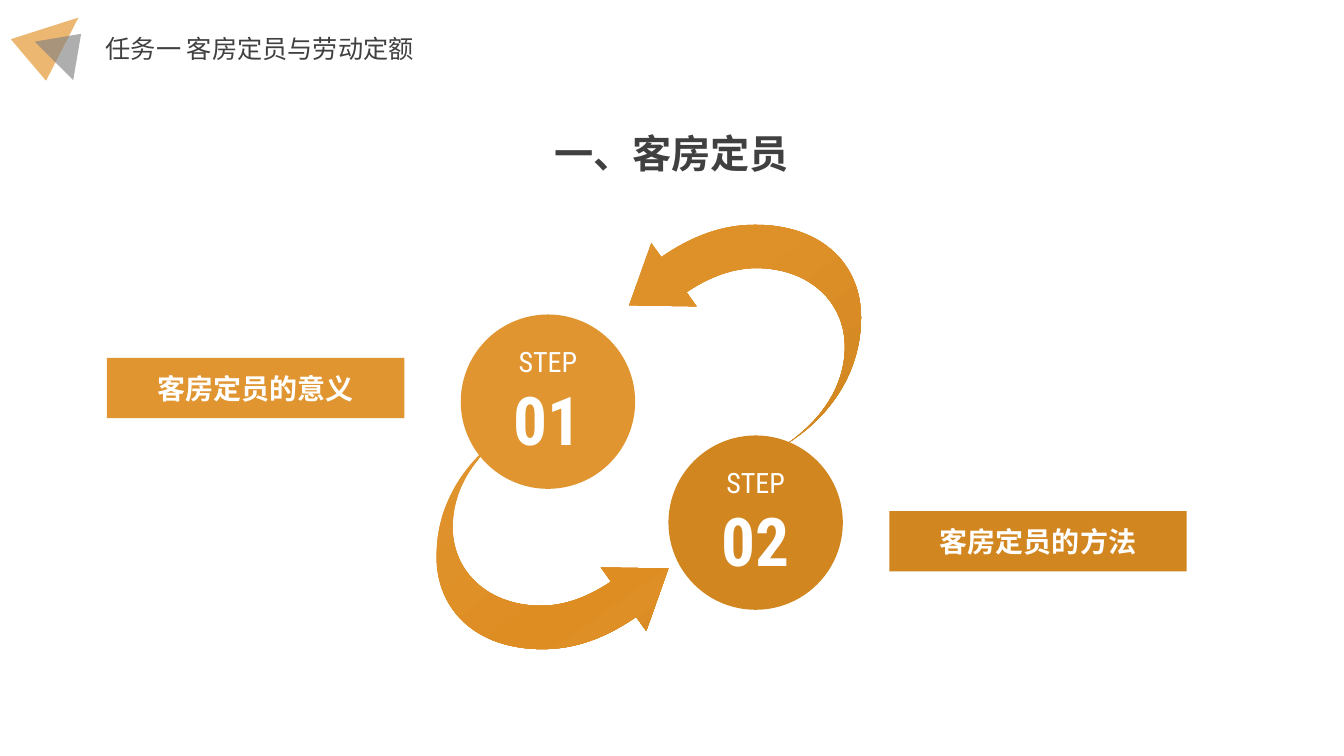
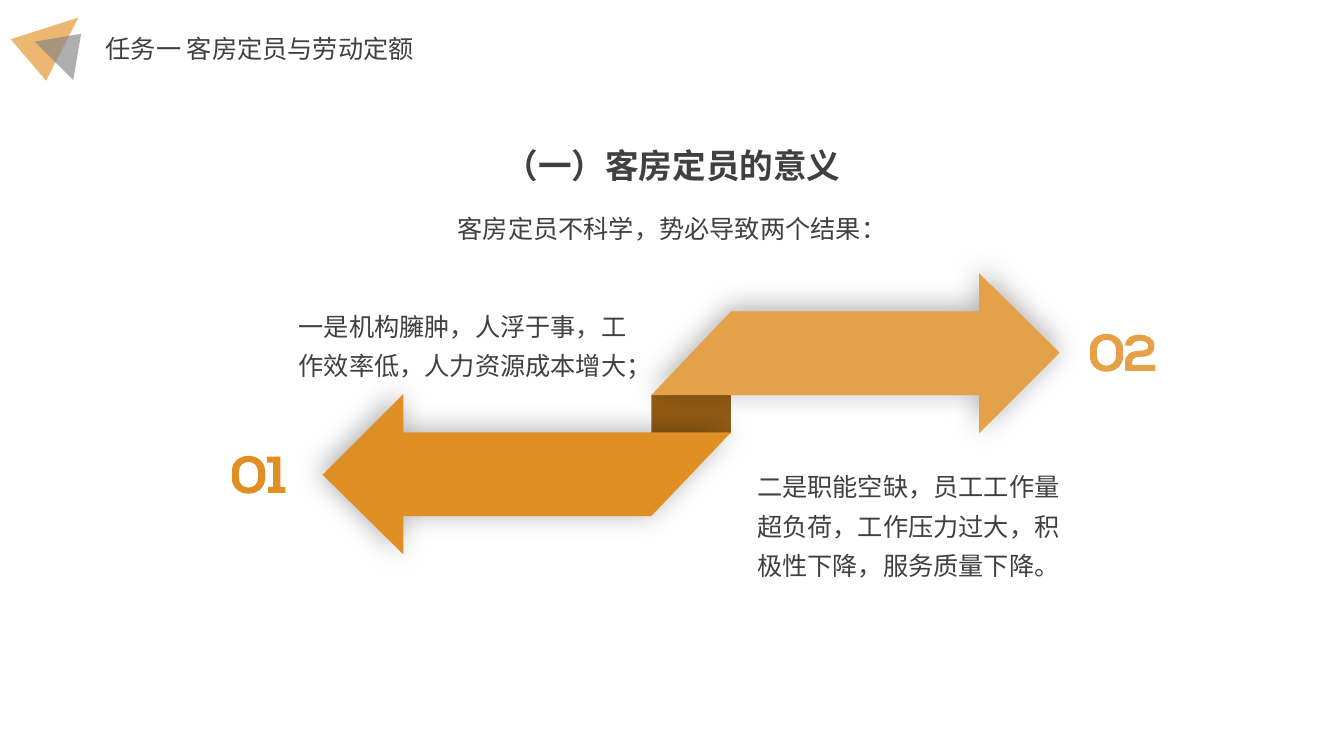
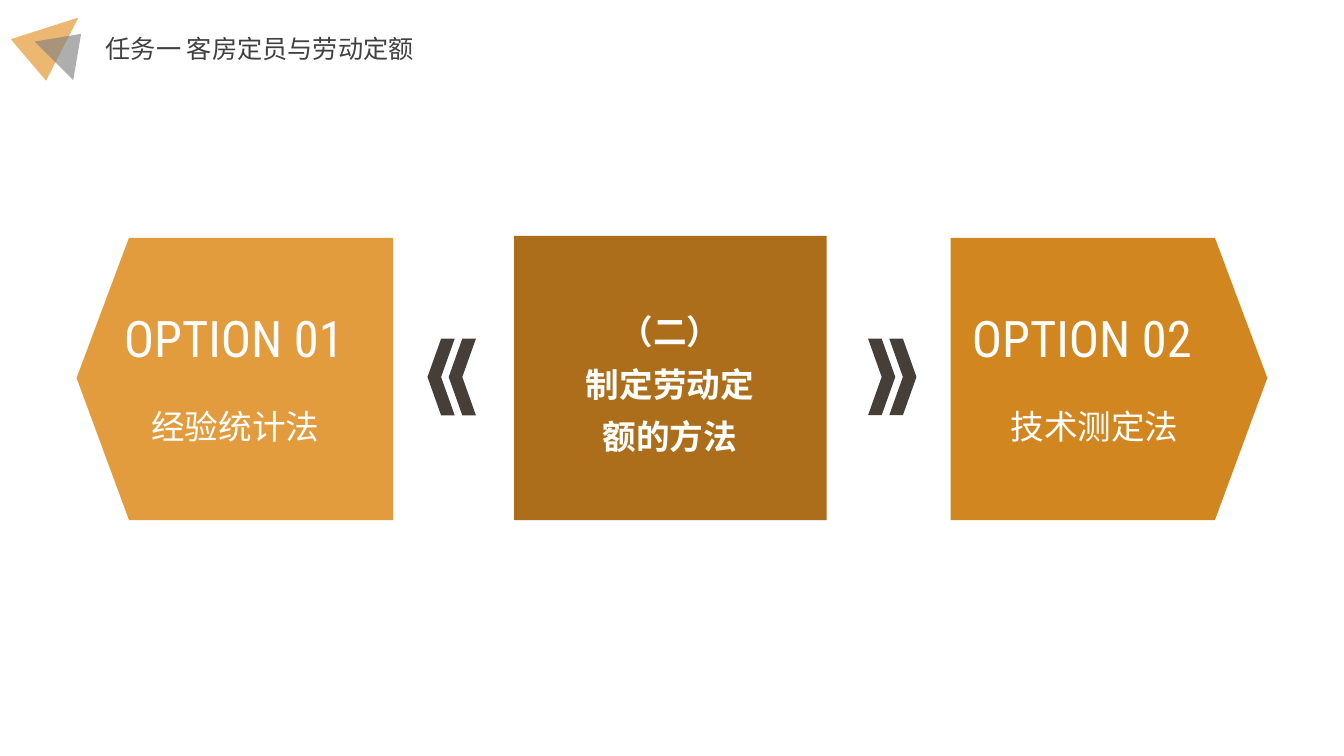
from lxml import etree
from pptx import Presentation
from pptx.dml.color import RGBColor
from pptx.enum import shapes, text
from pptx.oxml.ns import qn
from pptx.util import Inches, Pt

COLORS = {
    "white": "FFFFFF", "ink": "404040", "gray": "808080", "chevron": "453E39",
    "logo": "E18E1F", "light": "E09530", "dark": "D28620", "fold": "935D15",
    "upper": "E5A147", "lower": "E08F24", "center": "AD6E1B", "option": "E29C3E",
}
CHINESE, PLAIN, LATIN = "Noto Sans CJK SC", "DejaVu Sans", "Roboto Condensed"
HEADER = "任务一 客房定员与劳动定额"
TITLE_ONLY, BLANK = 5, 6
SHAPE = shapes.MSO_SHAPE
ALIGN = text.PP_ALIGN
ANCHOR = text.MSO_ANCHOR

# Outlines: a 1-tuple is a straight step, a 3-tuple a cubic Bézier step
SWIRL = [[
    ((5.06, 4.27),),
    ((4.59, 4.57), (4.33, 5.02), (4.33, 5.52)),
    ((4.33, 6.05), (4.72, 6.44), (5.38, 6.44)),
    ((5.72, 6.44), (6.02, 6.32), (6.31, 6.12)),
    ((6.41, 6.26),), ((6.63, 5.64),), ((5.96, 5.63),), ((6.06, 5.77),),
    ((5.84, 5.92), (5.6, 6.01), (5.37, 6.01)),
    ((4.84, 6.01), (4.49, 5.67), (4.49, 5.23)),
    ((4.49, 4.86), (4.7, 4.52), (5.06, 4.27)),
]]
RIBBON = [[((x, y),) for x, y in (
    (9.71, 2.71), (10.51, 3.5), (9.71, 4.3), (9.71, 3.92),
    (6.46, 3.92), (7.25, 3.09), (9.71, 3.09))]]
ZERO = [
    [((0, .15),), ((0, -.06), (.33, -.06), (.33, .15)), ((.33, .21),),
     ((.33, .42), (0, .42), (0, .21))],
    [((.07, .21),), ((.07, .34), (.26, .34), (.26, .21)), ((.26, .15),),
     ((.26, .02), (.07, .02), (.07, .15))],
]
ONE = [[((x, y),) for x, y in (
    (.01, .3), (.06, .3), (.06, .06), (0, .06), (0, 0),
    (.13, 0), (.13, .3), (.18, .3), (.18, .36), (.01, .36))]]
TWO = [[
    ((0, .11),), ((0, .03), (.07, 0), (.14, 0)), ((.21, 0), (.29, .03), (.29, .11)),
    ((.29, .21), (.22, .22), (.15, .22)), ((.12, .22), (.07, .23), (.07, .27)),
    ((.07, .3),), ((.3, .3),), ((.3, .36),), ((0, .36),), ((0, .27),),
    ((0, .19), (.07, .16), (.15, .16)), ((.17, .16), (.23, .16), (.23, .11)),
    ((.23, .08), (.19, .06), (.14, .06)), ((.11, .06), (.07, .08), (.07, .11)),
]]


def box(left, top, width, height):
    return Inches(left), Inches(top), Inches(width), Inches(height)


def rgb(name):
    return RGBColor.from_string(COLORS[name])


# Formatting helpers
def paint(shape, color, alpha=None):
    shape.shadow.inherit = False
    shape.line.fill.background()
    shape.fill.solid()
    shape.fill.fore_color.rgb = rgb(color)
    if alpha:
        node = shape._element.spPr.find(".//" + qn("a:srgbClr"))
        etree.SubElement(node, qn("a:alpha")).set("val", str(alpha * 1000))


def write(frame, lines, color, font, align=ALIGN.CENTER, spacing=None, anchor=ANCHOR.TOP):
    """Fill a text frame; each line is (text, size, bold)."""
    frame.word_wrap = True
    frame.auto_size = text.MSO_AUTO_SIZE.NONE
    frame.vertical_anchor = anchor
    for index, (words, size, bold) in enumerate(lines):
        paragraph = frame.add_paragraph() if index else frame.paragraphs[0]
        paragraph.alignment = align
        if spacing:
            paragraph.line_spacing = spacing
        run = paragraph.add_run()
        run.text = words
        run.font.size, run.font.bold, run.font.name = Pt(size), bold, font
        run.font.color.rgb = rgb(color)
        east_asian = etree.SubElement(run._r.get_or_add_rPr(), qn("a:ea"))
        east_asian.set("typeface", CHINESE)


def add_label(slide, place, lines, color="ink", font=CHINESE, **style):
    label = slide.shapes.add_textbox(*box(*place))
    write(label.text_frame, lines, color, font, **style)
    return label


def set_title(slide, place, words, size, font, spacing=None):
    title = slide.shapes.title
    title.left, title.top, title.width, title.height = box(*place)
    write(title.text_frame, [(words, size, True)], "ink", font, spacing=spacing)


def add_block(slide, kind, place, color, alpha=None, rotation=0):
    shape = slide.shapes.add_shape(kind, *box(*place))
    paint(shape, color, alpha)
    shape.rotation = rotation
    return shape


def add_shadow(shape, direction):
    effects = shape._element.spPr.find(qn("a:effectLst"))
    shadow = etree.SubElement(effects, qn("a:outerShdw"), blurRad=str(Pt(20)),
                              dist=str(Pt(3)), dir=str(direction * 60000),
                              algn="ctr", rotWithShape="0")
    color = etree.SubElement(shadow, qn("a:srgbClr"), val="000000")
    etree.SubElement(color, qn("a:alpha"), val="32000")


def set_gradient(shape, stops, angle):
    shape.fill.gradient()
    shape.fill.gradient_angle = angle
    stop_list = shape._element.spPr.find(".//" + qn("a:gsLst"))
    for old in list(stop_list):
        stop_list.remove(old)
    for position, color in stops:
        stop = etree.SubElement(stop_list, qn("a:gs"), pos=str(position * 1000))
        etree.SubElement(stop, qn("a:srgbClr"), val=color)


# Outline helpers
def half_turn(outline, center_x, center_y):
    return [[tuple((2 * center_x - x, 2 * center_y - y) for x, y in step)
             for step in contour] for contour in outline]


def bend(shape, outline):
    """Join the straight steps through control points into Bézier steps."""
    lines = iter(shape._element.spPr.findall(".//" + qn("a:lnTo")))
    for contour in outline:
        for step in contour[1:]:
            parts = [next(lines) for _ in step]
            if len(parts) == 3:
                curve = etree.Element(qn("a:cubicBezTo"))
                parts[0].addprevious(curve)
                for part in parts:
                    curve.append(part[0])
                    part.getparent().remove(part)


def add_outline(slide, outline, color, left=0, top=0):
    builder = None
    for contour in outline:
        start, *others = [(Inches(left + x), Inches(top + y))
                          for step in contour for x, y in step]
        if builder is None:
            builder = slide.shapes.build_freeform(*start)
        else:
            builder.move_to(*start)
        builder.add_line_segments(others, close=False)
    shape = builder.convert_to_shape()
    bend(shape, outline)
    for move in shape._element.spPr.findall(".//" + qn("a:moveTo"))[1:]:
        move.addprevious(etree.Element(qn("a:close")))
    etree.SubElement(shape._element.spPr.find(".//" + qn("a:path")), qn("a:close"))
    paint(shape, color)
    return shape


# Header shared through the slide master
def build_header(presentation, slide):
    header = [
        add_block(slide, SHAPE.ISOSCELES_TRIANGLE, (.26, .06, .54, .65), "logo", 63, 49.7),
        add_block(slide, SHAPE.ISOSCELES_TRIANGLE, (.4, .28, .54, .38), "gray", 63, 45.1),
        add_label(slide, (.95, .28, 7.8, .4), [(HEADER, 18, False)], font=PLAIN,
                  align=ALIGN.LEFT),
    ]
    tree = presentation.slide_master.shapes._spTree
    for number, shape in enumerate(header, 101):
        shape._element.nvSpPr.cNvPr.set("id", str(number))
        tree.append(shape._element)


def new_slide(presentation, layout):
    return presentation.slides.add_slide(presentation.slide_layouts[layout])


# Slide 1: cycle of two steps
def add_step(slide, left, top, number, color):
    circle = add_block(slide, SHAPE.OVAL, (left, top, 1.73, 1.73), color)
    frame = circle.text_frame
    frame.margin_left = frame.margin_right = Inches(.07)
    frame.margin_top = frame.margin_bottom = Inches(.06)
    write(frame, [("STEP", 20, False), (number, 48, True)], "white", LATIN,
          anchor=ANCHOR.MIDDLE)


def add_banner(slide, left, top, words, color):
    banner = add_block(slide, SHAPE.RECTANGLE, (left, top, 2.95, .6), color)
    write(banner.text_frame, [(words, 20, True)], "white", CHINESE, anchor=ANCHOR.MIDDLE)


def build_cycle_slide(presentation):
    slide = new_slide(presentation, TITLE_ONLY)
    build_header(presentation, slide)
    set_title(slide, (3.04, 1, 7.24, .72), "一、客房定员", 28, "Arial", 1.5)
    swirls = (
        (SWIRL, ((0, "E09530"), (74, "DE8D22"), (83, "DE8F26"), (100, "D28620"))),
        (half_turn(SWIRL, 6.435, 4.335),
         ((0, "E09530"), (17, "DF9129"), (26, "DF9129"), (100, "D28620"))),
    )
    for outline, stops in swirls:
        set_gradient(add_outline(slide, outline, "light"), stops, 305.2)
    add_step(slide, 4.57, 3.12, "01", "light")
    add_step(slide, 6.63, 4.32, "02", "dark")
    add_banner(slide, 1.06, 3.55, "客房定员的意义", "light")
    add_banner(slide, 8.82, 5.07, "客房定员的方法", "dark")


# Slide 2: folded ribbon with two arrows
def add_number(slide, left, top, digit, color):
    add_outline(slide, ZERO, color, left, top)
    add_outline(slide, digit, color, left + .35, top)


def build_ribbon_slide(presentation):
    slide = new_slide(presentation, TITLE_ONLY)
    set_title(slide, (4.2, 1.39, 4.94, .5), "（一）客房定员的意义", 24, PLAIN)
    add_block(slide, SHAPE.RECTANGLE, (6.46, 3.92, .79, .38), "fold")
    add_shadow(add_outline(slide, RIBBON, "upper"), 270)
    add_shadow(add_outline(slide, half_turn(RIBBON, 6.855, 4.105), "lower"), 225)
    add_label(slide, (2.63, 2.95, 3.68, .89),
              [("一是机构臃肿，人浮于事，工作效率低，人力资源成本增大；", 18, False)],
              align=ALIGN.RIGHT, spacing=1.3)
    add_label(slide, (7.41, 4.54, 3.39, 1.28),
              [("二是职能空缺，员工工作量超负荷，工作压力过大，积极性下降，服务质量下降。",
                18, False)], align=ALIGN.LEFT, spacing=1.3)
    add_number(slide, 2.3, 4.53, ONE, "lower")
    add_number(slide, 10.81, 3.32, TWO, "upper")
    add_label(slide, (3.73, 1.98, 5.87, .49),
              [("客房定员不科学，势必导致两个结果：", 18, False)], font=PLAIN, spacing=1.3)


# Slide 3: centre square with an option on each side
def add_chevrons(slide, left, top, rotation):
    for offset in (0, .21):
        add_block(slide, SHAPE.CHEVRON, (left + offset, top, .27, .76), "chevron",
                  rotation=rotation)


def add_option(slide, left, top, points_left, color, option, method):
    """Each option and method is (text, left offset, width)."""
    width, height, tip = 3.14, 2.8, .52
    corners = ((tip, 0), (width, 0), (width, height), (tip, height), (0, 1.39))
    outline = [[((x if points_left else width - x, y),) for x, y in corners]]
    add_outline(slide, outline, color, left, top)
    words, offset, span = method
    add_label(slide, (left + offset, top + 1.5, span, .57), [(words, 24, False)],
              "white", spacing=1.3)
    words, offset, span = option
    add_label(slide, (left + offset, top + .64, span, .71), [(words, 36, False)],
              "white", LATIN, align=ALIGN.JUSTIFY)


def build_options_slide(presentation):
    slide = new_slide(presentation, BLANK)
    add_chevrons(slide, 8.61, 3.36, 0)
    add_chevrons(slide, 4.24, 3.36, 180)
    add_block(slide, SHAPE.RECTANGLE, (5.1, 2.34, 3.1, 2.82), "center")
    add_label(slide, (5.56, 2.92, 2.17, 1.68),
              [("（二）", 24, True), ("制定劳动定额的方法", 24, True)], "white", spacing=1.3)
    add_option(slide, .76, 2.36, True, "option",
               ("OPTION 01", .37, 2.54), ("经验统计法", .56, 2.03))
    add_option(slide, 9.43, 2.36, False, "dark",
               ("OPTION 02", .11, 2.62), ("技术测定法", .48, 1.89))


def main():
    presentation = Presentation()
    presentation.slide_width, presentation.slide_height = Inches(13.33), Inches(7.5)
    build_cycle_slide(presentation)
    build_ribbon_slide(presentation)
    build_options_slide(presentation)
    presentation.save("out.pptx")


if __name__ == "__main__":
    main()
